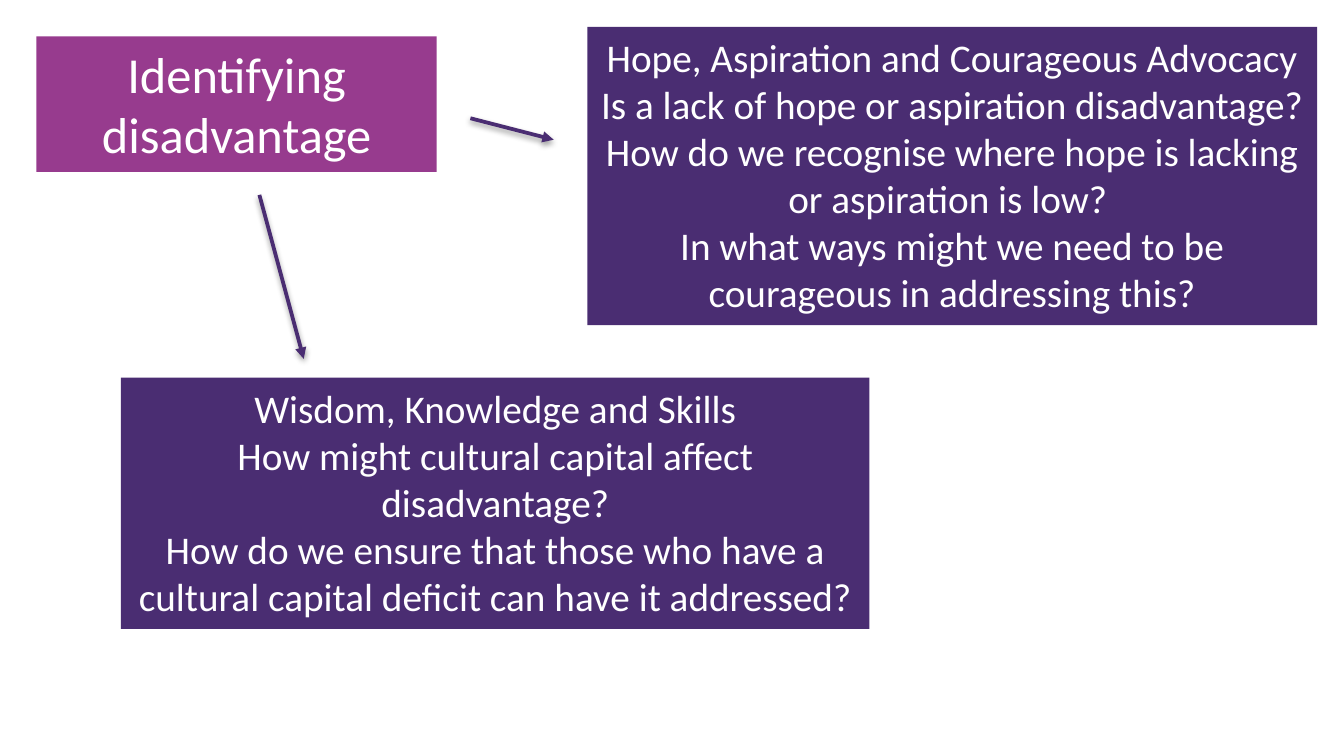
import pptx
import pptx.dml.color
import pptx.enum.shapes
import pptx.enum.text
import pptx.oxml
import pptx.oxml.ns
import pptx.util
from pptx.util import Inches

RGB = pptx.dml.color.RGBColor
PLUM = RGB(0x97, 0x3B, 0x8E)
VIOLET = RGB(0x4A, 0x2D, 0x72)
WHITE = RGB(0xFF, 0xFF, 0xFF)

NS = pptx.oxml.ns.nsdecls("a")
HEAD = f'<a:tailEnd {NS} type="triangle"/>'
SHADE = (
    f'<a:effectLst {NS}><a:outerShdw blurRad="40000" dist="20000" dir="5400000" rotWithShape="0">'
    '<a:srgbClr val="000000"><a:alpha val="38000"/></a:srgbClr></a:outerShdw></a:effectLst>'
)

TITLE = ["Identifying disadvantage"]
HOPE = [
    "Hope, Aspiration and Courageous Advocacy",
    "Is a lack of hope or aspiration disadvantage?",
    "How do we recognise where hope is lacking or aspiration is low? ",
    "In what ways might we need to be courageous in addressing this?",
]
WISDOM = [
    "Wisdom, Knowledge and Skills",
    "How might cultural capital affect disadvantage?",
    "How do we ensure that those who have a cultural capital deficit can have it addressed?",
]


class Board:
    def __init__(self, slide):
        self.slide = slide
        self.font = {"name": "Calibri"}
        self.frame = {
            "word_wrap": True,
            "auto_size": pptx.enum.text.MSO_AUTO_SIZE.SHAPE_TO_FIT_TEXT,
            "vertical_anchor": pptx.enum.text.MSO_ANCHOR.TOP,
        }

    def box(self, area, lines, fill, size):
        kind = pptx.enum.shapes.MSO_SHAPE.RECTANGLE
        shape = self.slide.shapes.add_shape(kind, *map(Inches, area))
        shape.shadow.inherit = False
        shape.fill.solid()
        shape.fill.fore_color.rgb = fill
        shape.line.fill.background()
        frame = shape.text_frame
        for key, value in self.frame.items():
            setattr(frame, key, value)
        frame.text = "\n".join(lines)
        look = {**self.font, "size": pptx.util.Pt(size)}
        for para in frame.paragraphs:
            para.alignment = pptx.enum.text.PP_ALIGN.CENTER
            for key, value in look.items():
                setattr(para.font, key, value)
            para.font.color.rgb = WHITE

    def arrow(self, start, end):
        kind = pptx.enum.shapes.MSO_CONNECTOR.STRAIGHT
        link = self.slide.shapes.add_connector(kind, *map(Inches, start + end))
        link.line.color.rgb = VIOLET
        link.line.width = pptx.util.Pt(2)
        link.line._get_or_add_ln().append(pptx.oxml.parse_xml(HEAD))
        link._element.spPr.append(pptx.oxml.parse_xml(SHADE))


def main():
    deck = pptx.Presentation()
    deck.slide_width = Inches(10)
    deck.slide_height = Inches(10 * 9 / 16)
    board = Board(deck.slides.add_slide(deck.slide_layouts[6]))
    board.box((0.27, 0.27, 2.98, 1.01), TITLE, PLUM, 27)
    board.box((4.37, 0.2, 5.43, 2.22), HOPE, VIOLET, 21)
    board.box((0.9, 2.81, 5.57, 1.87), WISDOM, VIOLET, 21)
    board.arrow((1.93, 1.45), (2.26, 2.67))
    board.arrow((3.5, 0.88), (4.12, 1.04))
    deck.save("out.pptx")


if __name__ == "__main__":
    main()
